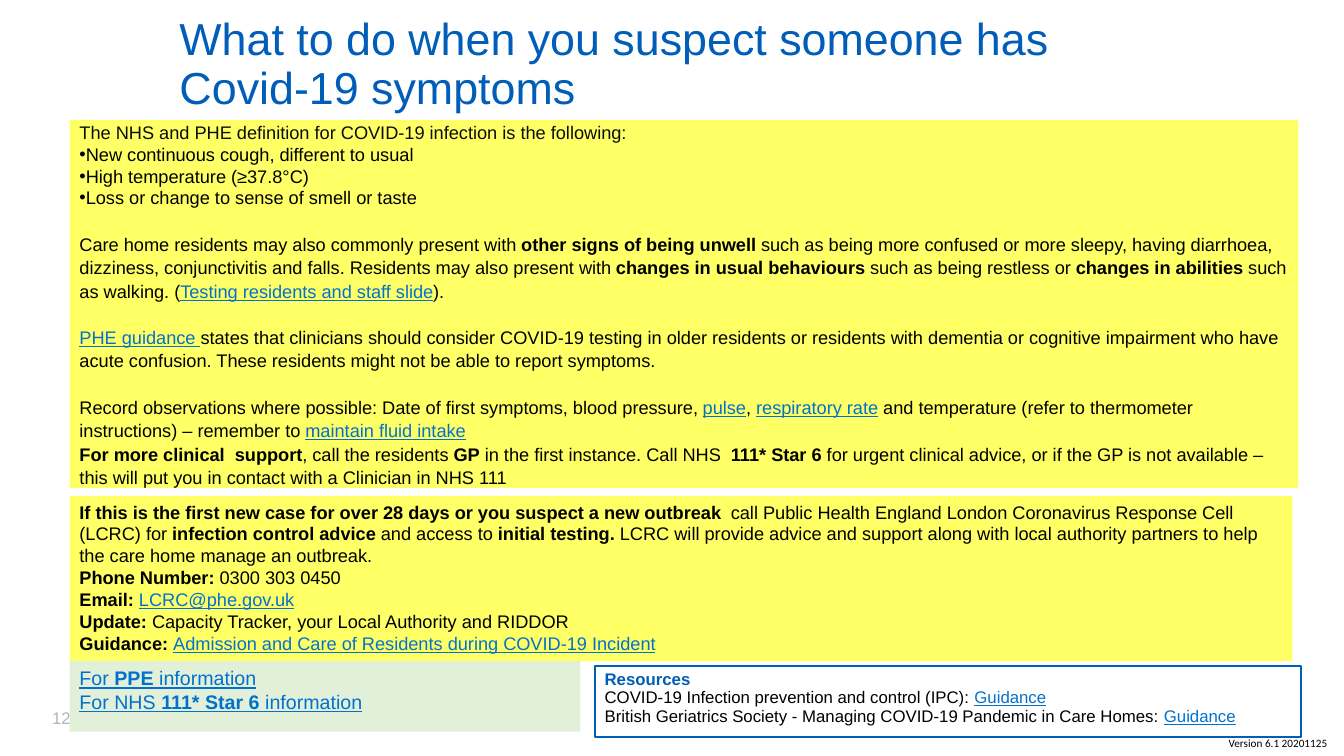
from pptx import Presentation
from pptx.dml.color import RGBColor
from pptx.enum.shapes import MSO_SHAPE
from pptx.enum.text import MSO_ANCHOR, MSO_AUTO_SIZE, PP_ALIGN
from pptx.oxml.ns import qn
from pptx.util import Pt
from lxml.etree import SubElement

COLORS = {
    "blue": "005EB8", "link": "0072CE", "link start": "0563C1", "text": "000000",
    "intro": "0D0D0D", "number": "ADB6BE", "yellow": "FFFF66", "green": "E2F0D9",
}
# Run styles: colour, bold, underline
STYLES = {
    "plain": ("text", False, False),
    "bold": ("text", True, False),
    "intro": ("intro", False, False),
    "number": ("number", False, False),
    "heading": ("blue", True, False),
    "title": ("blue", False, False),
    "link": ("link", False, True),
    "bold link": ("link", True, True),
    "link start": ("link start", False, True),
}
BULLET, GAP = "bullet", "gap"


def write_text(shape, paragraphs, size, font="Arial", spacing=1.0,
               anchor=MSO_ANCHOR.TOP, wrap=True):
    """Each paragraph is a list of runs: a plain string or a (text, style) pair.

    A paragraph may open with BULLET or GAP (a line of space before it).
    """
    frame = shape.text_frame
    frame.word_wrap = wrap
    frame.auto_size = MSO_AUTO_SIZE.NONE
    frame.vertical_anchor = anchor
    for index, runs in enumerate(paragraphs):
        paragraph = frame.paragraphs[0] if index == 0 else frame.add_paragraph()
        paragraph.alignment = PP_ALIGN.LEFT
        paragraph.line_spacing = 1.0 if runs[0] == BULLET else spacing
        paragraph.space_before = Pt(16.5 if runs[0] == GAP else 0)
        if runs[0] == BULLET:
            properties = paragraph._p.get_or_add_pPr()
            properties.set("marL", "0")
            properties.set("indent", str(Pt(-27)))
            SubElement(properties, qn("a:buFont"), typeface="Arial")
            SubElement(properties, qn("a:buChar"), char="•")
        for item in runs:
            if item in (BULLET, GAP):
                continue
            text, style = (item, "plain") if isinstance(item, str) else item
            color, bold, underline = STYLES[style]
            run = paragraph.add_run()
            run.text = text
            run.font.name = font
            run.font.size = Pt(size)
            run.font.bold = bold
            run.font.underline = underline
            run.font.color.rgb = RGBColor.from_string(COLORS[color])


def add_panel(left, top, width, height, fill=None, line=None):
    panel = slide.shapes.add_shape(
        MSO_SHAPE.RECTANGLE, Pt(left), Pt(top), Pt(width), Pt(height))
    panel.shadow.inherit = False
    if fill:
        panel.fill.solid()
        panel.fill.fore_color.rgb = RGBColor.from_string(COLORS[fill])
    else:
        panel.fill.background()
    if line:
        panel.line.color.rgb = RGBColor.from_string(COLORS[line])
        panel.line.width = Pt(1.5)
    else:
        panel.line.fill.background()
    return panel


presentation = Presentation()
presentation.slide_width = Pt(960)
presentation.slide_height = Pt(540)
slide = presentation.slides.add_slide(presentation.slide_layouts[5])

title = slide.shapes.title
title.left, title.top, title.width, title.height = Pt(121), Pt(8.6), Pt(731), Pt(90)
write_text(title, [[("What to do when you suspect someone has Covid-19 symptoms", "title")]],
           size=32, spacing=0.9)

slide_number = slide.shapes.add_textbox(Pt(30.2), Pt(501.8), Pt(67.7), Pt(21.6))
write_text(slide_number, [[("12", "number")]], size=12)

resources = add_panel(424.8, 476, 504.7, 50.4, line="blue")
write_text(resources, [
    [("Resources", "heading")],
    ["COVID-19 Infection prevention and control (IPC): ", ("Guidance", "link")],
    ["British Geriatrics Society - Managing COVID-19 Pandemic in Care Homes: ",
     ("Guidance", "link")],
], size=12, spacing=0.9)

symptoms = add_panel(49.7, 85.7, 877.7, 262.8, fill="yellow")
write_text(symptoms, [
    [("The NHS and PHE definition for COVID-19 infection is the following:", "intro")],
    [BULLET, "New continuous cough, different to usual"],
    [BULLET, "High temperature (≥37.8°C)"],
    [BULLET, "Loss or change to sense of smell or taste"],
    [GAP, "Care home residents may also commonly present with ",
     ("other signs of being unwell ", "bold"),
     "such as being more confused or more sleepy, having diarrhoea, dizziness, "
     "conjunctivitis and falls. Residents may also present with ",
     ("changes in usual behaviours ", "bold"), "such as being restless or ",
     ("changes in abilities ", "bold"), "such as walking. (",
     ("Testing residents and staff slide", "link"), ")."],
    [GAP, ("PHE guidance ", "link"),
     "states that clinicians should consider COVID-19 testing in older residents or "
     "residents with dementia or cognitive impairment who have acute confusion. "
     "These residents might not be able to report symptoms."],
    [GAP, "Record observations where possible: Date of first symptoms, blood pressure, ",
     ("pulse", "link"), ", ", ("respiratory rate", "link"),
     " and temperature (refer to thermometer instructions) – remember to ",
     ("m", "link start"), ("aintain fluid intake", "link")],
    [("For more clinical  support", "bold"), ", call the residents ", ("GP", "bold"),
     " in the first instance. Call NHS  ", ("111* Star 6", "bold"),
     " for urgent clinical advice, or if the GP is not available – this will put you "
     "in contact with a Clinician in NHS 111"],
], size=13, spacing=1.07, anchor=MSO_ANCHOR.MIDDLE)

outbreak = add_panel(49.7, 354.2, 873.4, 118.1, fill="yellow")
write_text(outbreak, [
    [("If this is the first new case for over 28 days or you suspect a new outbreak ", "bold"),
     " call Public Health England London Coronavirus Response Cell (LCRC) for ",
     ("infection control advice", "bold"), " and access to ", ("initial testing. ", "bold"),
     "LCRC will provide advice and support along with local authority partners to help "
     "the care home manage an outbreak."],
    [("Phone Number:", "bold"), " 0300 303 0450"],
    [("Email: ", "bold"), ("LCRC@phe.gov.uk", "link")],
    [("Update:", "bold"), " Capacity Tracker, your Local Authority and RIDDOR"],
    [("Guidance: ", "bold"),
     ("Admission and Care of Residents during COVID-19 Incident", "link")],
], size=13)

information = add_panel(49.7, 472.3, 365, 50.4, fill="green")
write_text(information, [
    [("For ", "link"), ("PPE", "bold link"), (" information", "link")],
    [("For NHS ", "link"), ("111* Star 6 ", "bold link"), ("information", "link")],
], size=14)

version = slide.shapes.add_textbox(Pt(870.5), Pt(522.7), Pt(85.7), Pt(17.3))
write_text(version, [["Version 6.1 20201125"]], size=8, font="Calibri", wrap=False)

presentation.save("out.pptx")
